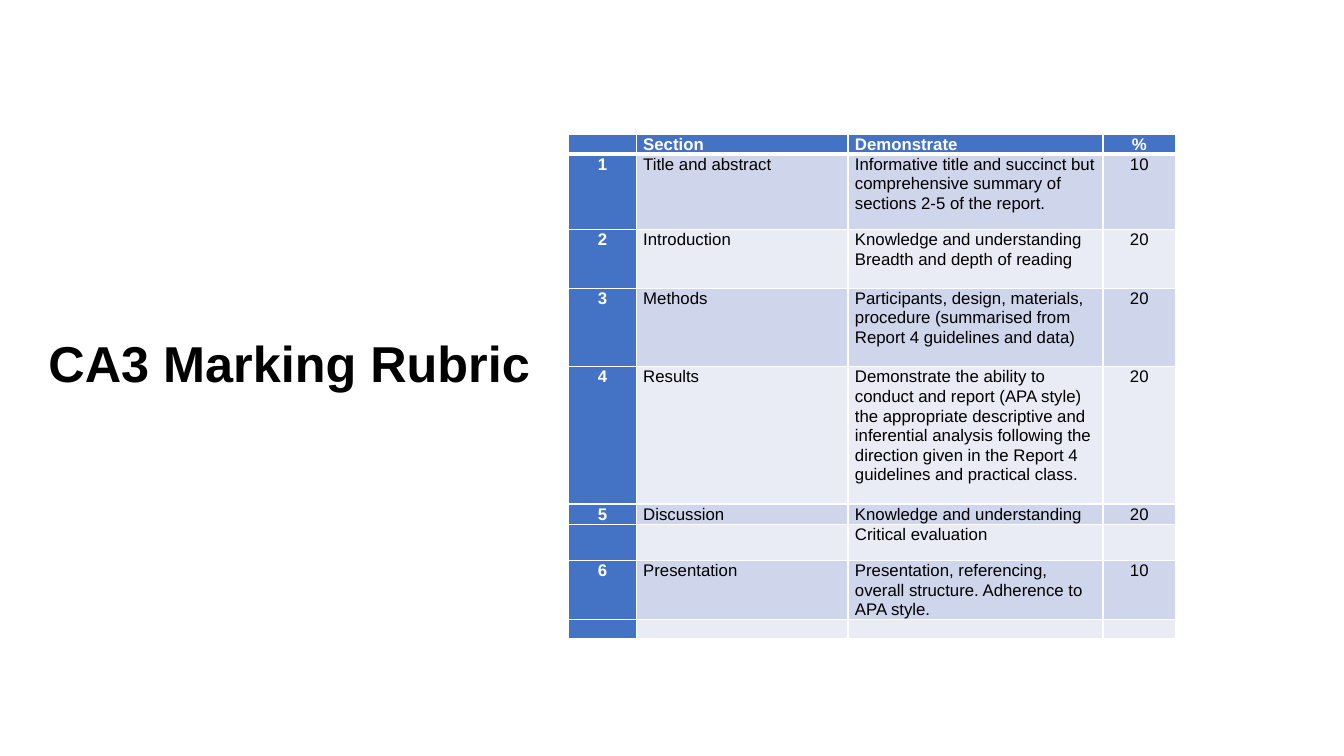
from lxml import etree
from pptx import Presentation
from pptx.dml.color import RGBColor
from pptx.enum.text import MSO_ANCHOR, PP_ALIGN
from pptx.oxml.ns import qn
from pptx.util import Inches, Pt

LEFT, CENTER = PP_ALIGN.LEFT, PP_ALIGN.CENTER
MIDDLE = MSO_ANCHOR.MIDDLE
BLUE, DARK_BAND, LIGHT_BAND = "4472C4", "CFD5EA", "E9EBF5"
WHITE, BLACK = "FFFFFF", "000000"

COLUMN_WIDTHS = [0.67, 2.1, 2.53, 0.72]
ROW_HEIGHTS = [0.2, 0.75, 0.58, 0.78, 1.36, 0.2, 0.36, 0.58, 0.19]
RUBRIC = [
    ("", "Section", "Demonstrate", "%"),
    ("1", "Title and abstract",
     "Informative title and succinct but comprehensive summary of sections 2-5 of the report.",
     "10"),
    ("2", "Introduction", "Knowledge and understanding\nBreadth and depth of reading", "20"),
    ("3", "Methods",
     "Participants, design, materials, procedure (summarised from Report 4 guidelines and data)",
     "20"),
    ("4", "Results",
     "Demonstrate the ability to conduct and report (APA style) the appropriate descriptive "
     "and inferential analysis following the direction given in the Report 4 guidelines and "
     "practical class.", "20"),
    ("5", "Discussion", "Knowledge and understanding", "20"),
    ("", "", "Critical evaluation", ""),
    ("6", "Presentation",
     "Presentation, referencing, overall structure. Adherence to APA style.", "10"),
    ("", "", "", ""),
]


def rgb(value):
    """Turn a hex string into a colour."""
    return RGBColor.from_string(value)


def format_paragraph(paragraph, size, color, bold, align, spacing):
    """Set the font, alignment and line spacing of a paragraph."""
    paragraph.alignment = align
    paragraph.line_spacing = spacing
    font = paragraph.font
    font.name, font.size, font.bold = "Arial", Pt(size), bold
    font.color.rgb = rgb(color)


def add_title(slide, text):
    """Place and format the slide title."""
    title = slide.shapes.title
    title.left, title.top = Inches(0.38), Inches(3.12)
    title.width, title.height = Inches(11.28), Inches(1.02)
    frame = title.text_frame
    frame.text = text
    frame.vertical_anchor = MIDDLE
    format_paragraph(frame.paragraphs[0], 36, BLACK, True, LEFT, 0.9)


def add_borders(cell, row):
    """Draw white cell borders, thicker under the header row."""
    properties = cell._tc.get_or_add_tcPr()
    widths = {"L": 1, "R": 1, "T": 3 if row == 1 else 1, "B": 3 if row == 0 else 1}
    for side, width in widths.items():
        line = etree.SubElement(properties, qn(f"a:ln{side}"), w=str(Pt(width)))
        fill = etree.SubElement(line, qn("a:solidFill"))
        etree.SubElement(fill, qn("a:srgbClr"), val=WHITE)


def fill_cell(cell, text, row, column):
    """Write and format one rubric cell according to its place."""
    heading = row == 0 or column == 0
    cell.margin_left = cell.margin_right = Inches(0.07)
    cell.margin_top = cell.margin_bottom = 0
    add_borders(cell, row)
    cell.fill.solid()
    band = DARK_BAND if row % 2 else LIGHT_BAND
    cell.fill.fore_color.rgb = rgb(BLUE if heading else band)
    cell.text_frame.text = text
    align = CENTER if column in (0, 3) else LEFT
    for paragraph in cell.text_frame.paragraphs:
        format_paragraph(paragraph, 12, WHITE if heading else BLACK, heading, align, Pt(14))


def add_rubric(slide):
    """Add the marking rubric table."""
    table = slide.shapes.add_table(
        len(RUBRIC), len(COLUMN_WIDTHS), Inches(5.64), Inches(1.33),
        Inches(sum(COLUMN_WIDTHS)), Inches(sum(ROW_HEIGHTS))).table
    table.first_col = True
    for column, width in zip(table.columns, COLUMN_WIDTHS):
        column.width = Inches(width)
    for row, height in zip(table.rows, ROW_HEIGHTS):
        row.height = Inches(height)
    for row, entries in enumerate(RUBRIC):
        for column, text in enumerate(entries):
            fill_cell(table.cell(row, column), text, row, column)


def main():
    """Build the marking rubric slide."""
    presentation = Presentation()
    presentation.slide_width, presentation.slide_height = Inches(13.33), Inches(7.5)
    slide = presentation.slides.add_slide(presentation.slide_layouts[5])
    add_title(slide, "CA3 Marking Rubric")
    add_rubric(slide)
    presentation.save("out.pptx")


if __name__ == "__main__":
    main()
